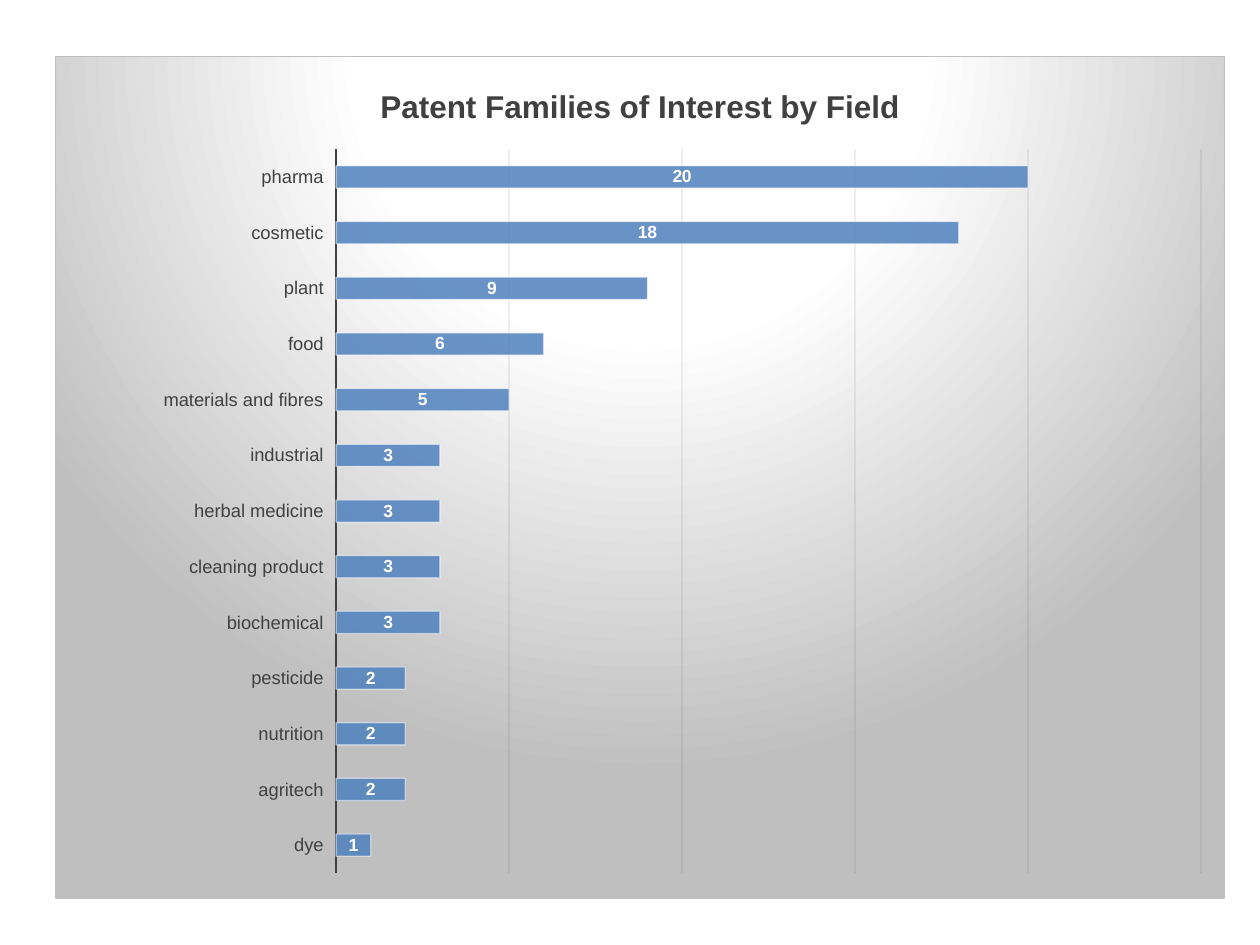
"""Build a slide with a bar chart of patent families by field."""
from typing import NamedTuple

from pptx import Presentation
from pptx.chart.chart import Chart
from pptx.chart.data import CategoryChartData
from pptx.dml.color import RGBColor
from pptx.dml.fill import FillFormat
from pptx.dml.line import LineFormat
from pptx.enum.chart import XL_CHART_TYPE, XL_LABEL_POSITION, XL_TICK_LABEL_POSITION, XL_TICK_MARK
from pptx.oxml import parse_xml
from pptx.oxml.ns import nsdecls
from pptx.oxml.xmlchemy import OxmlElement
from pptx.slide import Slide
from pptx.text.text import Font
from pptx.util import Emu, Pt

BAR_STACKED = XL_CHART_TYPE.BAR_STACKED
CENTER = XL_LABEL_POSITION.CENTER
LOW = XL_TICK_LABEL_POSITION.LOW
NO_TICK = XL_TICK_MARK.NONE

BLACK = RGBColor(0x00, 0x00, 0x00)
INK = RGBColor(0x40, 0x40, 0x40)
GRID = RGBColor(0x0D, 0x0D, 0x0D)
BLUE = RGBColor(0x4F, 0x81, 0xBD)
WHITE = RGBColor(0xFF, 0xFF, 0xFF)
SILVER = RGBColor(0xBF, 0xBF, 0xBF)

FONT_NAME = "Arial"
PX_PER_INCH = 126
TITLE = "Patent Families of Interest by Field"


class Field(NamedTuple):
    name: str
    families: int


class Box(NamedTuple):
    left: int
    top: int
    width: int
    height: int


class PlotLayout(NamedTuple):
    x: float
    y: float
    w: float
    h: float


FIELDS = [
    Field("pharma", 20),
    Field("cosmetic", 18),
    Field("plant", 9),
    Field("food", 6),
    Field("materials and fibres", 5),
    Field("industrial", 3),
    Field("herbal medicine", 3),
    Field("cleaning product", 3),
    Field("biochemical", 3),
    Field("pesticide", 2),
    Field("nutrition", 2),
    Field("agritech", 2),
    Field("dye", 1),
]
CHART_BOX = Box(55, 56, 1170, 843)
PLOT_LAYOUT = PlotLayout(0.24, 0.11, 0.74, 0.86)


def px(length: int) -> Emu:
    return Emu(round(length * 914400 / PX_PER_INCH))


def style_font(font: Font, size: float, color: RGBColor, bold: bool = False) -> None:
    font.name = FONT_NAME
    font.size = Pt(size)
    font.bold = bold
    font.color.rgb = color


def style_fill(fill: FillFormat, color: RGBColor, opacity: int = 100) -> None:
    fill.solid()
    fill.fore_color.rgb = color
    if opacity < 100:
        alpha = OxmlElement("a:alpha")
        alpha.set("val", str(opacity * 1000))
        fill._xPr.find(".//{*}srgbClr").append(alpha)


def style_line(line: LineFormat, color: RGBColor, width: float, opacity: int = 100) -> None:
    line.width = Pt(width)
    style_fill(line.fill, color, opacity)


def set_background(chart: Chart) -> None:
    stops = "".join(
        f'<a:gs pos="{position * 1000}"><a:srgbClr val="{color}"/></a:gs>'
        for position, color in [(0, WHITE), (39, WHITE), (100, SILVER)]
    )
    background = parse_xml(
        f'<c:spPr {nsdecls("c", "a")}><a:gradFill rotWithShape="1"><a:gsLst>{stops}</a:gsLst>'
        '<a:path path="circle"><a:fillToRect l="50000" t="-80000" r="50000" b="180000"/></a:path>'
        f'</a:gradFill><a:ln w="{Pt(0.75)}"><a:solidFill><a:srgbClr val="{SILVER}"/></a:solidFill>'
        "</a:ln></c:spPr>"
    )
    chart._chartSpace.chart.addnext(background)


def set_plot_layout(chart: Chart, plot_layout: PlotLayout) -> None:
    plot_area = chart._chartSpace.chart.plotArea
    for old_layout in plot_area.findall("{*}layout"):
        plot_area.remove(old_layout)
    modes = '<c:xMode val="edge"/><c:yMode val="edge"/>'
    lengths = "".join(f'<c:{key} val="{value}"/>' for key, value in plot_layout._asdict().items())
    plot_area.insert(0, parse_xml(
        f'<c:layout {nsdecls("c")}><c:manualLayout><c:layoutTarget val="inner"/>'
        f"{modes}{lengths}</c:manualLayout></c:layout>"
    ))


def style_title(chart: Chart, text: str) -> None:
    chart.has_title = True
    frame = chart.chart_title.text_frame
    frame.text = text
    style_font(frame.paragraphs[0].runs[0].font, 18, INK, bold=True)
    chart.chart_title.include_in_layout = False


def style_axes(chart: Chart) -> None:
    fields = chart.category_axis
    fields.major_tick_mark = fields.minor_tick_mark = NO_TICK
    fields.tick_label_position = LOW
    fields.has_major_gridlines = False
    style_font(fields.tick_labels.font, 10.5, INK)
    style_line(fields.format.line, INK, 1.5)
    counts = chart.value_axis
    counts.minimum_scale, counts.maximum_scale, counts.major_unit = 0, 25, 5
    counts.has_major_gridlines = True
    style_line(counts.major_gridlines.format.line, GRID, 0.75, opacity=10)
    counts.visible = False


def style_bars(chart: Chart) -> None:
    plot = chart.plots[0]
    plot.gap_width = 150
    plot.overlap = 100
    plot.vary_by_categories = False
    bars = plot.series[0]
    bars.invert_if_negative = False
    style_fill(bars.format.fill, BLUE, opacity=85)
    style_line(bars.format.line, WHITE, 0.75, opacity=50)
    labels = bars.data_labels
    labels.show_value = True
    labels.position = CENTER
    style_font(labels.font, 10, WHITE, bold=True)


def draw_chart(page: Slide, box: Box, fields: list[Field]) -> None:
    data = CategoryChartData()
    rising = fields[::-1]
    data.categories = [field.name for field in rising]
    data.add_series("Series 1", [field.families for field in rising])
    chart = page.shapes.add_chart(BAR_STACKED, *map(px, box), data).chart
    chart.has_legend = False
    style_font(chart.font, 10, BLACK)
    style_title(chart, TITLE)
    style_axes(chart)
    style_bars(chart)
    set_plot_layout(chart, PLOT_LAYOUT)
    set_background(chart)


def main() -> None:
    deck = Presentation()
    deck.slide_width, deck.slide_height = px(1260), px(945)
    page = deck.slides.add_slide(deck.slide_layouts[6])
    draw_chart(page, CHART_BOX, FIELDS)
    deck.save("out.pptx")


if __name__ == "__main__":
    main()
